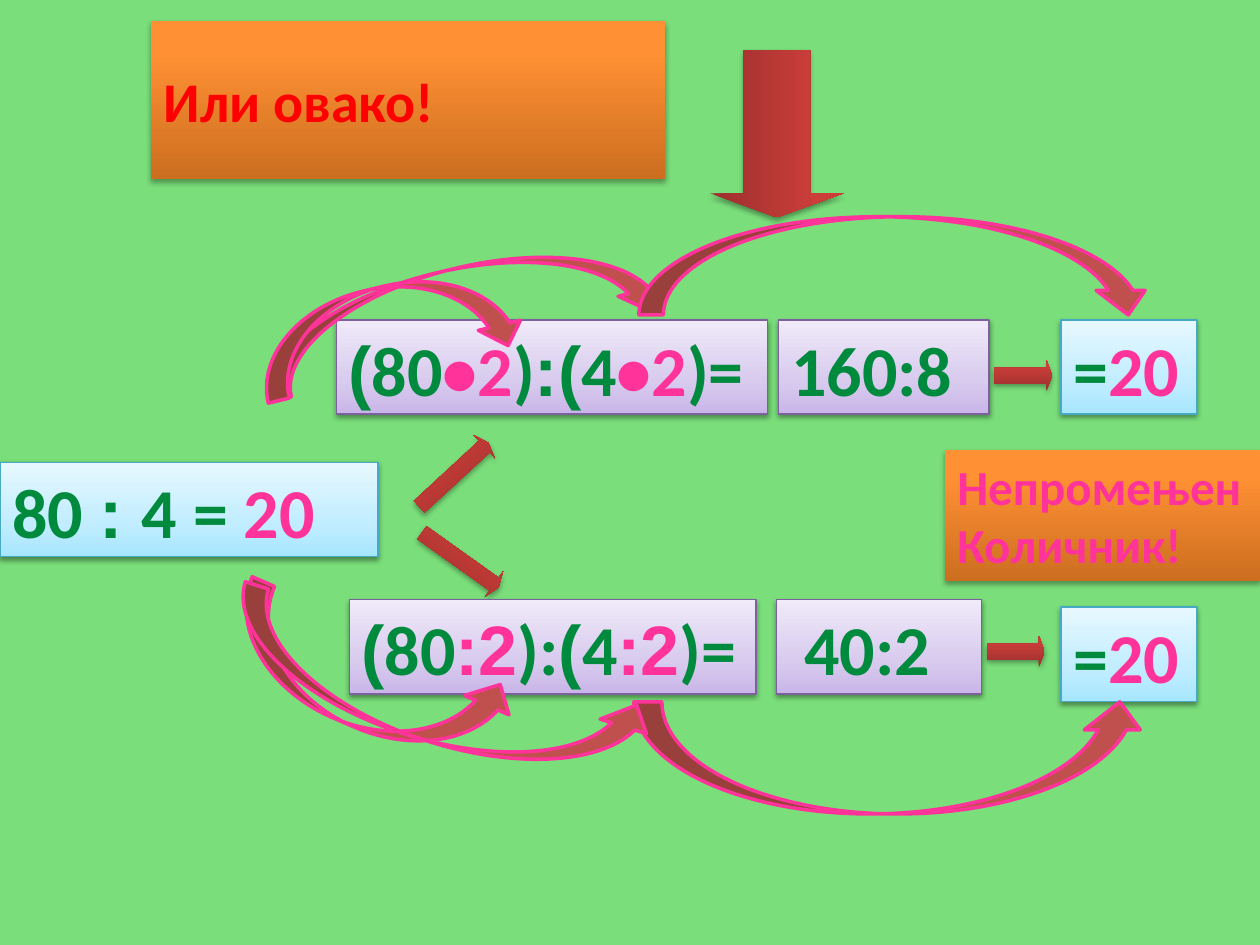
import copy

import lxml.etree
import pptx
import pptx.dml.color
import pptx.enum.shapes
import pptx.enum.text
import pptx.oxml.ns
import pptx.util

Cm = pptx.util.Cm
Pt = pptx.util.Pt
RGBColor = pptx.dml.color.RGBColor
SHAPE = pptx.enum.shapes.MSO_SHAPE
ANCHOR = pptx.enum.text.MSO_ANCHOR
qn = pptx.oxml.ns.qn

BACKGROUND = RGBColor(0x7A, 0xDE, 0x7A)
GREEN = RGBColor(0x00, 0x8A, 0x3E)
PINK = RGBColor(0xFF, 0x33, 0x99)
RED = RGBColor(0xFF, 0x00, 0x00)
ARC_FILL = RGBColor(0xC0, 0x50, 0x4D)
BLUE_LINE = RGBColor(0x46, 0xAA, 0xC5)
PURPLE_LINE = RGBColor(0x7D, 0x60, 0xA0)
BLUE = [(0, RGBColor(0xA7, 0xE6, 0xFF)), (0.35, RGBColor(0xC1, 0xED, 0xFF)),
        (1, RGBColor(0xE7, 0xF8, 0xFF))]
PURPLE = [(0, RGBColor(0xC9, 0xB5, 0xE8)), (0.35, RGBColor(0xD8, 0xCB, 0xEE)),
          (1, RGBColor(0xF0, 0xEA, 0xF9))]
ORANGE = [(0, RGBColor(0xCC, 0x6E, 0x20)), (0.8, RGBColor(0xFF, 0x90, 0x34)),
          (1, RGBColor(0xFF, 0x91, 0x36))]
BRICK = [(0, RGBColor(0x9C, 0x2F, 0x2D)), (0.8, RGBColor(0xCB, 0x3E, 0x3A)),
         (1, RGBColor(0xCE, 0x3B, 0x37))]
BODY_FONT = "Calibri"
SIGN_FONT = "Arial"
ROW_HEIGHT = 1.9


def add_shape(page, kind, box, rotation=0):
    shape = page.shapes.add_shape(kind, *(Cm(length) for length in box))
    shape.rotation = rotation
    shape.shadow.inherit = False
    return shape


def shade(shape, stops):
    shape.fill.gradient()
    stop_list = shape._element.spPr.find(qn("a:gradFill")).find(qn("a:gsLst"))
    stop_list.append(copy.deepcopy(stop_list[0]))
    for stop, (position, color) in zip(shape.fill.gradient_stops, stops):
        stop.position = position
        stop.color.rgb = color
    shape.fill.gradient_angle = 90


def cast_shadow(shape, distance, opacity):
    effects = shape._element.spPr.find(qn("a:effectLst"))
    shadow = lxml.etree.SubElement(
        effects, qn("a:outerShdw"), blurRad=str(Pt(3.1)), dist=str(Pt(distance)),
        dir="5400000", rotWithShape="0")
    color = lxml.etree.SubElement(shadow, qn("a:srgbClr"), val="000000")
    lxml.etree.SubElement(color, qn("a:alpha"), val=str(opacity * 1000))


def add_card(page, box, lines, stops, line_color=None, size=40, anchor=ANCHOR.TOP):
    card = add_shape(page, SHAPE.RECTANGLE, box)
    shade(card, stops)
    if line_color is None:
        card.line.fill.background()
        cast_shadow(card, 1.8, 35)
    else:
        card.line.color.rgb = line_color
        card.line.width = Pt(0.75)
        cast_shadow(card, 1.6, 38)
    frame = card.text_frame
    frame.word_wrap = True
    frame.vertical_anchor = anchor
    for index, line in enumerate(lines):
        para = frame.add_paragraph() if index else frame.paragraphs[0]
        para.alignment = pptx.enum.text.PP_ALIGN.LEFT
        for text, color, font in line:
            span = para.add_run()
            span.text = text
            span.font.name = font
            span.font.size = Pt(size)
            span.font.bold = True
            span.font.color.rgb = color


def add_arrow(page, box, rotation=0):
    arrow = add_shape(page, SHAPE.RIGHT_ARROW, box, rotation)
    arrow.adjustments[0] = 0.5
    arrow.adjustments[1] = 0.181
    shade(arrow, BRICK)
    arrow.line.fill.background()
    cast_shadow(arrow, 1.8, 35)


def add_heading(page, left, top):
    add_card(page, (left, top, 10.36, 3.18), [[("Или овако!", RED, BODY_FONT)]],
             ORANGE, size=32, anchor=ANCHOR.MIDDLE)
    add_arrow(page, (left + 10.92, top + 0.92, 3.38, 2.69), 90)


def add_problem(page, left, top):
    spans = [("80 ", GREEN, BODY_FONT), (": ", GREEN, SIGN_FONT),
             ("4 = ", GREEN, BODY_FONT), ("20", PINK, BODY_FONT)]
    add_card(page, (left, top, 7.62, ROW_HEIGHT), [spans], BLUE, BLUE_LINE)
    add_arrow(page, (left + 8.2, top - 0.07, 1.9, 0.64), 317.3)
    add_arrow(page, (left + 8.33, top + 1.65, 1.9, 0.64), 35.5)


def add_branch(page, left, top, width, spans, step, step_left, step_width, drop):
    add_card(page, (left, top, width, ROW_HEIGHT), [spans], PURPLE, PURPLE_LINE)
    add_card(page, (step_left, top, step_width, ROW_HEIGHT),
             [[(step, GREEN, BODY_FONT)]], PURPLE, PURPLE_LINE)
    add_arrow(page, (step_left + step_width + 0.1, top + 0.8 - drop / 2, 1.17, 0.64))
    add_card(page, (21.39, top + drop, 2.74, ROW_HEIGHT),
             [[("=", GREEN, BODY_FONT), ("20", PINK, BODY_FONT)]], BLUE, BLUE_LINE)


def add_arcs(page, left, top, arcs, flipped):
    for x, y, width, height, rotation in arcs:
        arc = add_shape(page, SHAPE.CURVED_DOWN_ARROW,
                        (left + x, top + y, width, height), rotation)
        if flipped:
            arc._element.spPr.find(qn("a:xfrm")).set("flipV", "1")
        arc.fill.solid()
        arc.fill.fore_color.rgb = ARC_FILL
        arc.line.color.rgb = PINK
        arc.line.width = Pt(2)


def add_note(page, left, top):
    lines = [[(text, PINK, BODY_FONT)] for text in ("Непромењен", "Количник!")]
    add_card(page, (left, top, 6.35, 2.64), lines, ORANGE, size=28)


def main():
    deck = pptx.Presentation()
    deck.slide_width, deck.slide_height = Cm(25.4), Cm(19.05)
    page = deck.slides.add_slide(deck.slide_layouts[6])
    page.background.fill.solid()
    page.background.fill.fore_color.rgb = BACKGROUND

    multiplied = [("(", GREEN, SIGN_FONT), ("80", GREEN, BODY_FONT),
                  ("•2", PINK, BODY_FONT), (")", GREEN, BODY_FONT),
                  (":(", GREEN, SIGN_FONT), ("4", GREEN, BODY_FONT),
                  ("•2", PINK, BODY_FONT), (")=", GREEN, BODY_FONT)]
    divided = [("(", GREEN, SIGN_FONT), ("80", GREEN, BODY_FONT),
               (":2", PINK, SIGN_FONT), ("):", GREEN, BODY_FONT),
               ("(", GREEN, SIGN_FONT), ("4", GREEN, BODY_FONT),
               (":2", PINK, SIGN_FONT), (")=", GREEN, BODY_FONT)]
    upper_arcs = [(0, 0, 8.31, 1.75, 346.5), (7.75, -1.04, 10.36, 1.98, 0),
                  (0, 0.36, 5.41, 1.75, 346.5)]
    lower_arcs = [(8.33, 1.42, 10.36, 2.26, 0), (0, 0, 5.94, 1.96, 23.5),
                  (0, 0.27, 8.76, 1.96, 17.5)]

    add_problem(page, 0, 9.32)
    add_branch(page, 6.78, 6.45, 8.69, multiplied, "160:8", 15.7, 4.24, 0)
    add_branch(page, 7.04, 12.09, 8.2, divided, " 40:2", 15.65, 4.14, 0.15)
    add_heading(page, 3.05, 0.43)
    add_arcs(page, 5.13, 5.41, upper_arcs, False)
    add_arcs(page, 4.45, 12.73, lower_arcs, True)
    add_note(page, 19.05, 9.07)
    deck.save("out.pptx")


if __name__ == "__main__":
    main()
